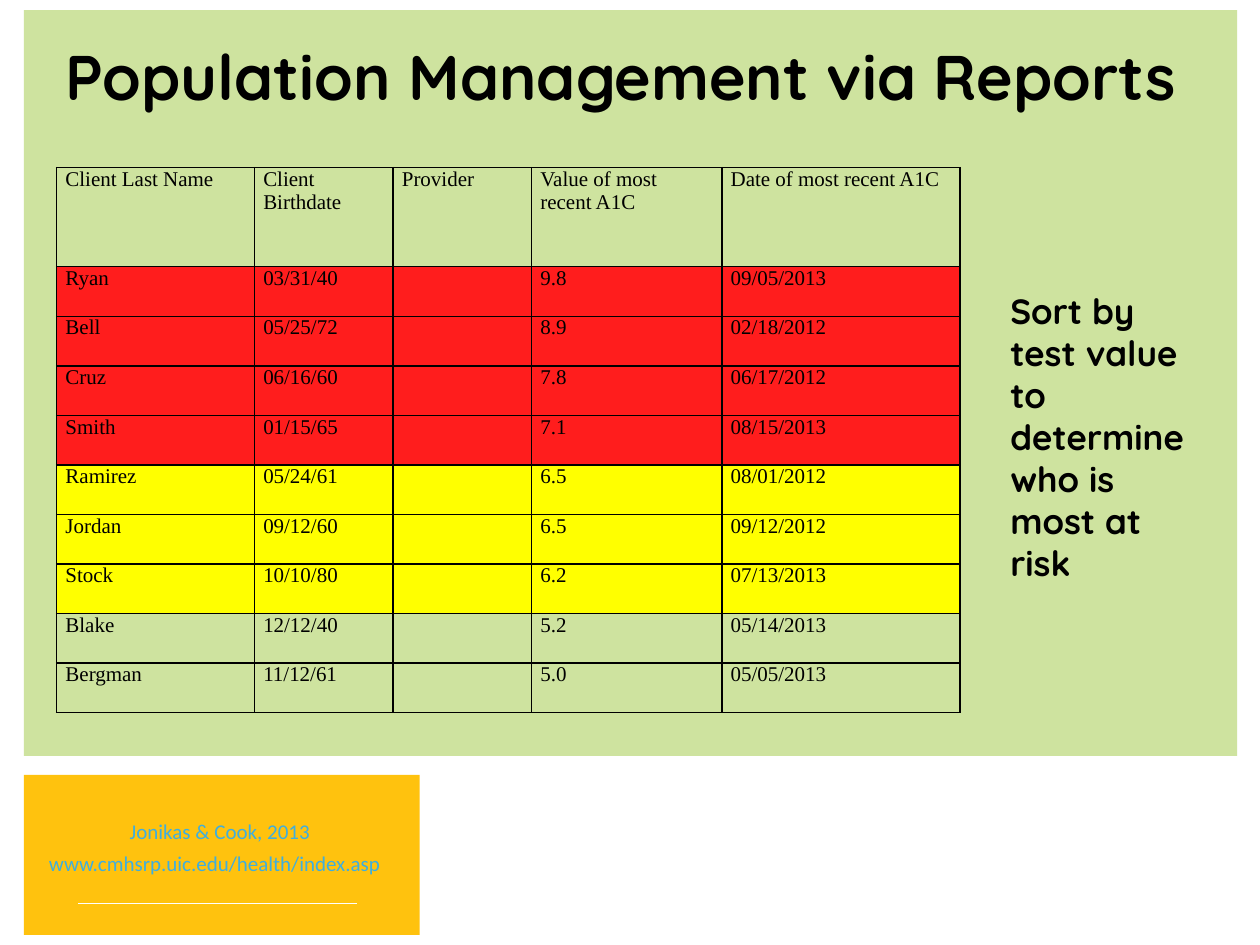
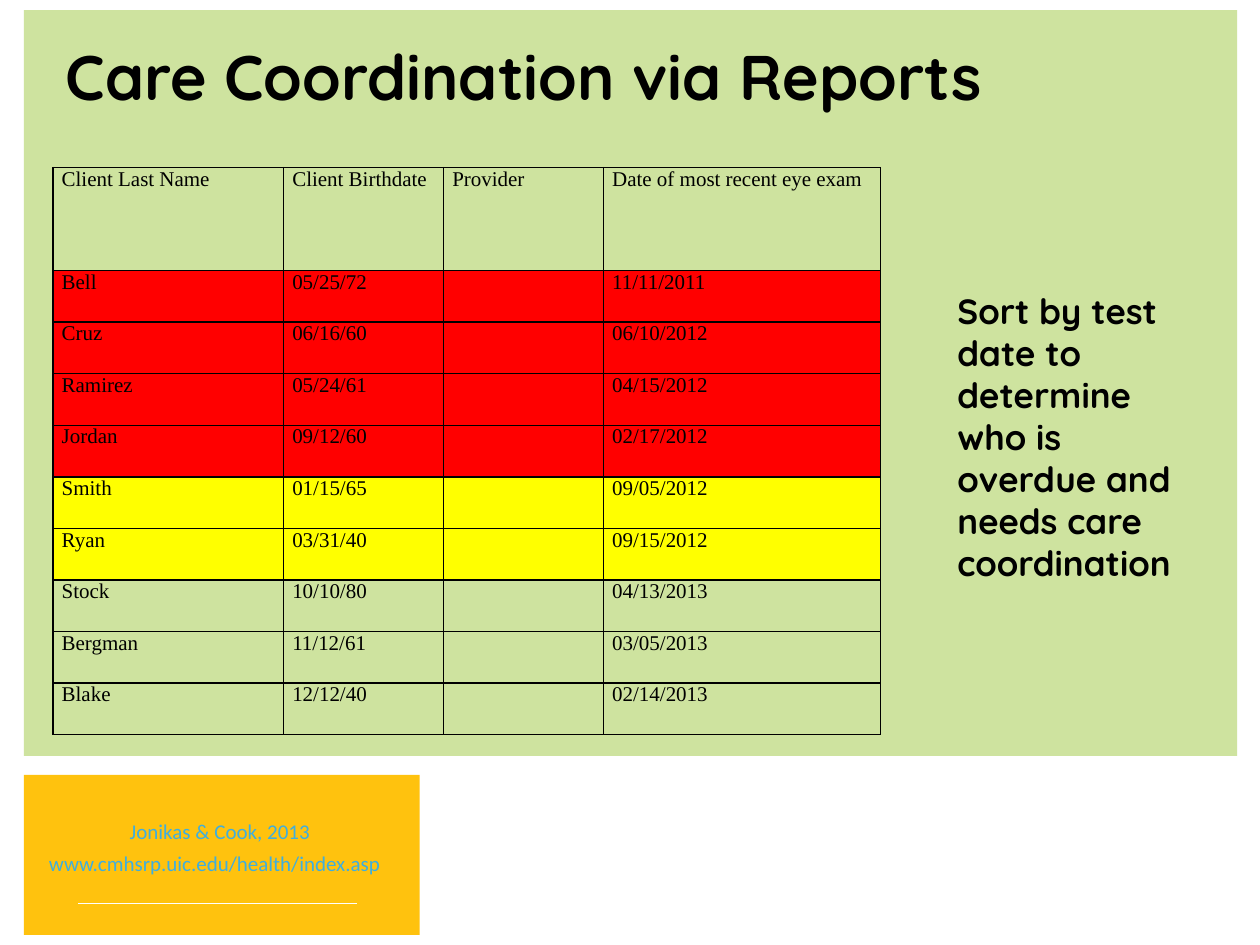
from itertools import chain, repeat

from lxml.etree import SubElement
from pptx import Presentation
from pptx.dml.color import RGBColor
from pptx.enum.shapes import MSO_CONNECTOR, MSO_SHAPE
from pptx.enum.text import MSO_ANCHOR, MSO_AUTO_SIZE, PP_ALIGN
from pptx.oxml.ns import qn
from pptx.util import Inches, Pt

BLACK, WHITE = "000000", "FFFFFF"
GREEN, GOLD, SKY = "CEE39F", "FFC20E", "3FAEDE"
SOFT_RED, RED, YELLOW = "FF1D1D", "FF0000", "FFFF00"
HEADING_FONT, SOURCE_FONT, TABLE_FONT = "Quicksand", "Calibri", "Times New Roman"
TITLE_ONLY = 5
HEADER_UNITS = 2

A1C_HEADER = ["Client Last Name", "Client Birthdate", "Provider",
              "Value of most recent A1C", "Date of most recent A1C"]
A1C_RESULTS = [
    ("Ryan", "03/31/40", "", "9.8", "09/05/2013"),
    ("Bell", "05/25/72", "", "8.9", "02/18/2012"),
    ("Cruz", "06/16/60", "", "7.8", "06/17/2012"),
    ("Smith", "01/15/65", "", "7.1", "08/15/2013"),
    ("Ramirez", "05/24/61", "", "6.5", "08/01/2012"),
    ("Jordan", "09/12/60", "", "6.5", "09/12/2012"),
    ("Stock", "10/10/80", "", "6.2", "07/13/2013"),
    ("Blake", "12/12/40", "", "5.2", "05/14/2013"),
    ("Bergman", "11/12/61", "", "5.0", "05/05/2013"),
]
EYE_EXAM_HEADER = ["Client Last Name", "Client Birthdate", "Provider",
                   "Date of most recent eye exam"]
EYE_EXAMS = [
    ("Bell", "05/25/72", "", "11/11/2011"),
    ("Cruz", "06/16/60", "", "06/10/2012"),
    ("Ramirez", "05/24/61", "", "04/15/2012"),
    ("Jordan", "09/12/60", "", "02/17/2012"),
    ("Smith", "01/15/65", "", "09/05/2012"),
    ("Ryan", "03/31/40", "", "09/15/2012"),
    ("Stock", "10/10/80", "", "04/13/2013"),
    ("Bergman", "11/12/61", "", "03/05/2013"),
    ("Blake", "12/12/40", "", "02/14/2013"),
]


def rgb(value):
    """Turn a hex string into a colour."""
    return RGBColor.from_string(value)


def write(frame, text, size=12, font=HEADING_FONT, color=BLACK, bold=False,
          align=PP_ALIGN.LEFT):
    """Put one formatted paragraph into a text frame."""
    frame.word_wrap = True
    paragraph = frame.paragraphs[0]
    paragraph.alignment = align
    run = paragraph.add_run()
    run.text = text
    run.font.size = Pt(size)
    run.font.name = font
    run.font.bold = bold
    run.font.color.rgb = rgb(color)


def add_panel(slide, left, top, width, height, color):
    """Draw a plain coloured rectangle."""
    panel = slide.shapes.add_shape(MSO_SHAPE.RECTANGLE, Inches(left), Inches(top),
                                   Inches(width), Inches(height))
    panel.shadow.inherit = False
    panel.fill.solid()
    panel.fill.fore_color.rgb = rgb(color)
    panel.line.fill.background()


def add_text(slide, left, top, width, height, text, **style):
    """Add a wrapped text box."""
    box = slide.shapes.add_textbox(Inches(left), Inches(top),
                                   Inches(width), Inches(height))
    write(box.text_frame, text, **style)


def add_rule(slide, left, right, y, color):
    """Draw a thin horizontal line."""
    rule = slide.shapes.add_connector(MSO_CONNECTOR.STRAIGHT, Inches(left), Inches(y),
                                      Inches(right), Inches(y))
    rule.line.color.rgb = rgb(color)
    rule.line.width = Pt(1)
    SubElement(rule.element.spPr, qn("a:effectLst"))


def add_source(slide):
    """Draw the gold citation block at the bottom left."""
    add_panel(slide, 0.19, 6.15, 3.14, 1.27, GOLD)
    citation = dict(font=SOURCE_FONT, color=SKY)
    add_text(slide, 0.33, 6.45, 2.83, 0.3, "Jonikas & Cook, 2013",
             align=PP_ALIGN.CENTER, **citation)
    add_text(slide, 0.29, 6.7, 3.08, 0.3, "www.cmhsrp.uic.edu/health/index.asp",
             **citation)
    add_rule(slide, 0.62, 2.83, 7.17, WHITE)


def set_title(slide, text):
    """Place the title above the green panel and fill it."""
    title = slide.shapes.title
    title.left, title.top = Inches(0.42), Inches(0.25)
    title.width, title.height = Inches(9.17), Inches(0.71)
    title.text_frame.auto_size = MSO_AUTO_SIZE.NONE
    title.text_frame.vertical_anchor = MSO_ANCHOR.TOP
    write(title.text_frame, text, size=36, bold=True)
    title.element.getparent().append(title.element)


def add_borders(cell):
    """Give a cell a thin black line on each side."""
    properties = cell._tc.get_or_add_tcPr()
    for side in ("lnL", "lnR", "lnT", "lnB"):
        border = SubElement(properties, qn(f"a:{side}"), w=str(Pt(1)))
        fill = SubElement(border, qn("a:solidFill"))
        SubElement(fill, qn("a:srgbClr"), val=BLACK)


def format_cell(cell, text, color):
    """Fill in one report cell, clear when no colour is given."""
    cell.margin_left = cell.margin_right = Inches(0.07)
    cell.margin_top = cell.margin_bottom = 0
    add_borders(cell)
    if color:
        cell.fill.solid()
        cell.fill.fore_color.rgb = rgb(color)
    else:
        cell.fill.background()
    write(cell.text_frame, text, font=TABLE_FONT)


def add_report(slide, left, height, widths, header, clients, risk_bands):
    """Add a client table whose leading rows are coloured by risk band."""
    rows = [header, *clients]
    table = slide.shapes.add_table(len(rows), len(header), Inches(left), Inches(1.33),
                                   Inches(sum(widths)), Inches(height)).table
    table.first_row = table.horz_banding = False
    for column, width in zip(table.columns, widths):
        column.width = Inches(width)
    unit = height / (len(clients) + HEADER_UNITS)
    for row in table.rows:
        row.height = Inches(unit)
    table.rows[0].height = Inches(unit * HEADER_UNITS)
    bands = chain.from_iterable(repeat(color, count) for color, count in risk_bands)
    colors = chain([None], bands, repeat(None))
    for row, texts, color in zip(table.rows, rows, colors):
        for cell, text in zip(row.cells, texts):
            format_cell(cell, text, color)


def add_report_slide(deck, title, advice, advice_left, advice_width, **report):
    """Build a slide with a title, a client report and advice beside it."""
    slide = deck.slides.add_slide(deck.slide_layouts[TITLE_ONLY])
    add_source(slide)
    add_panel(slide, 0.19, 0.08, 9.63, 5.92, GREEN)
    set_title(slide, title)
    add_report(slide, **report)
    add_text(slide, advice_left, 2.25, advice_width, 2.4, advice, size=20, bold=True)


def main():
    """Build and save both report slides."""
    deck = Presentation()
    deck.slide_width, deck.slide_height = Inches(10), Inches(7.5)
    add_report_slide(
        deck, "Population Management via Reports",
        "Sort by test value to determine who is most at risk", 7.92, 1.67,
        left=0.45, height=4.33, widths=[1.57, 1.1, 1.1, 1.51, 1.89],
        header=A1C_HEADER, clients=A1C_RESULTS,
        risk_bands=[(SOFT_RED, 4), (YELLOW, 3)])
    add_report_slide(
        deck, "Care Coordination via Reports",
        "Sort by test date to determine who is overdue and needs care coordination",
        7.5, 2.08,
        left=0.42, height=4.5, widths=[1.83, 1.27, 1.27, 2.2],
        header=EYE_EXAM_HEADER, clients=EYE_EXAMS,
        risk_bands=[(RED, 4), (YELLOW, 2)])
    deck.save("out.pptx")


if __name__ == "__main__":
    main()
